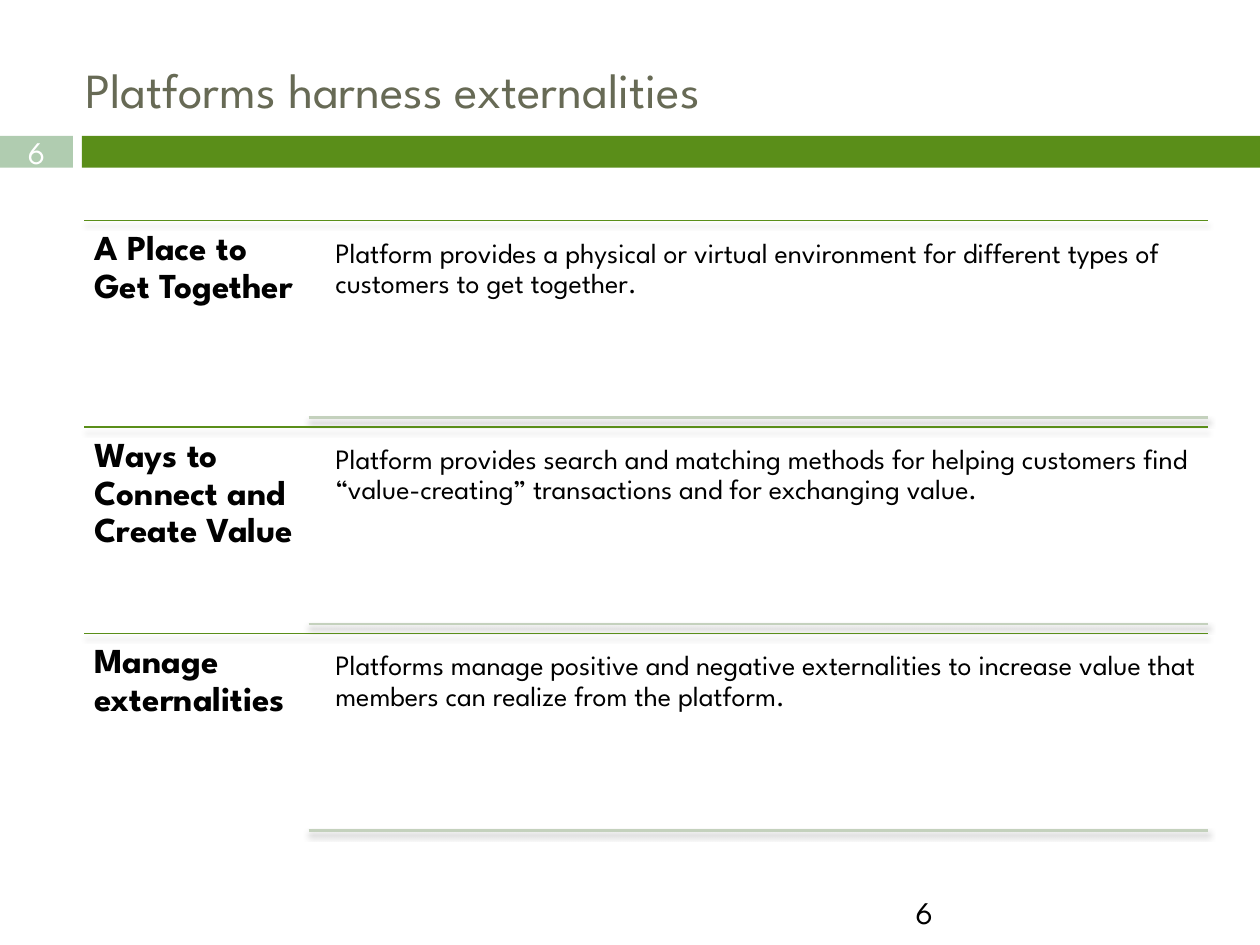
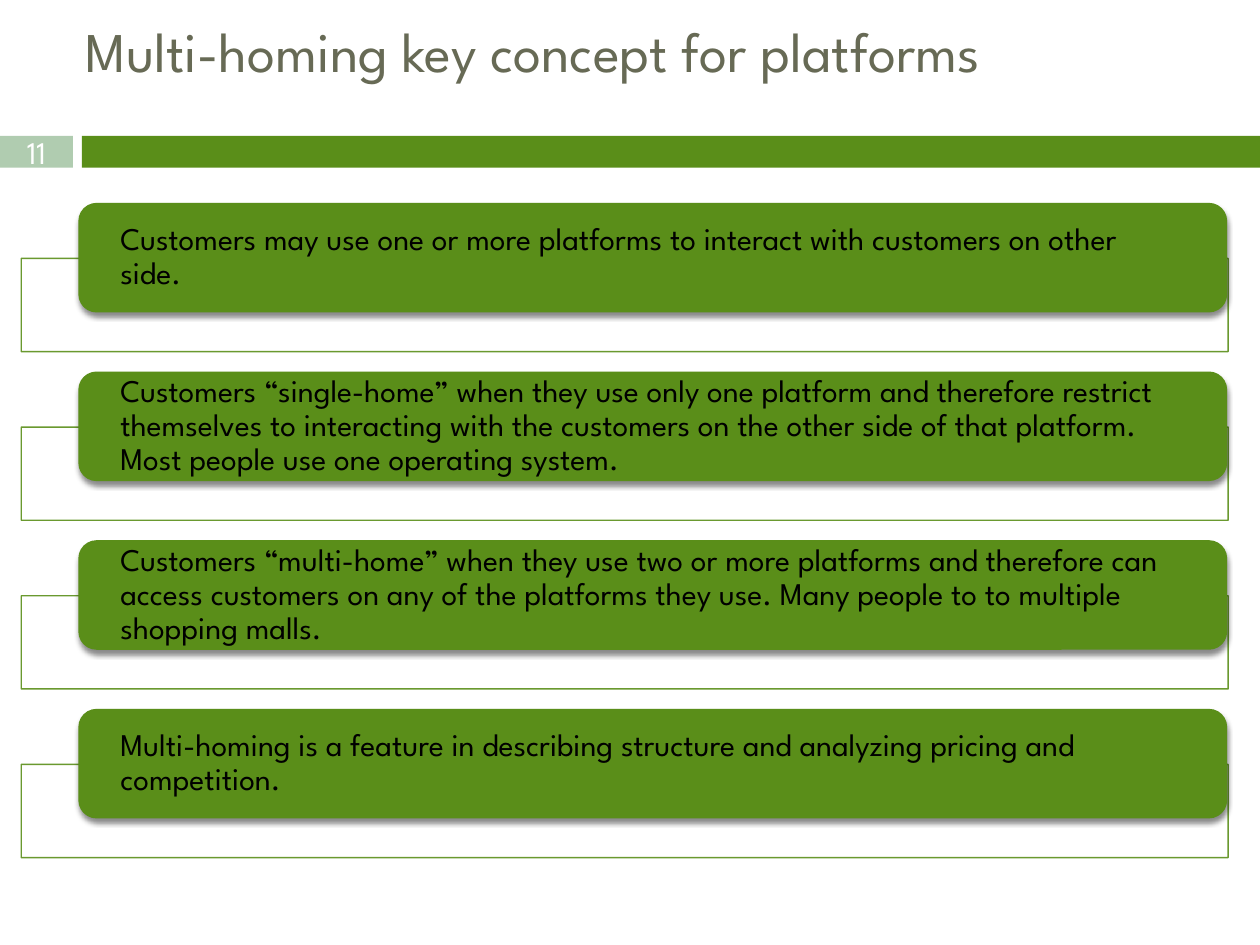
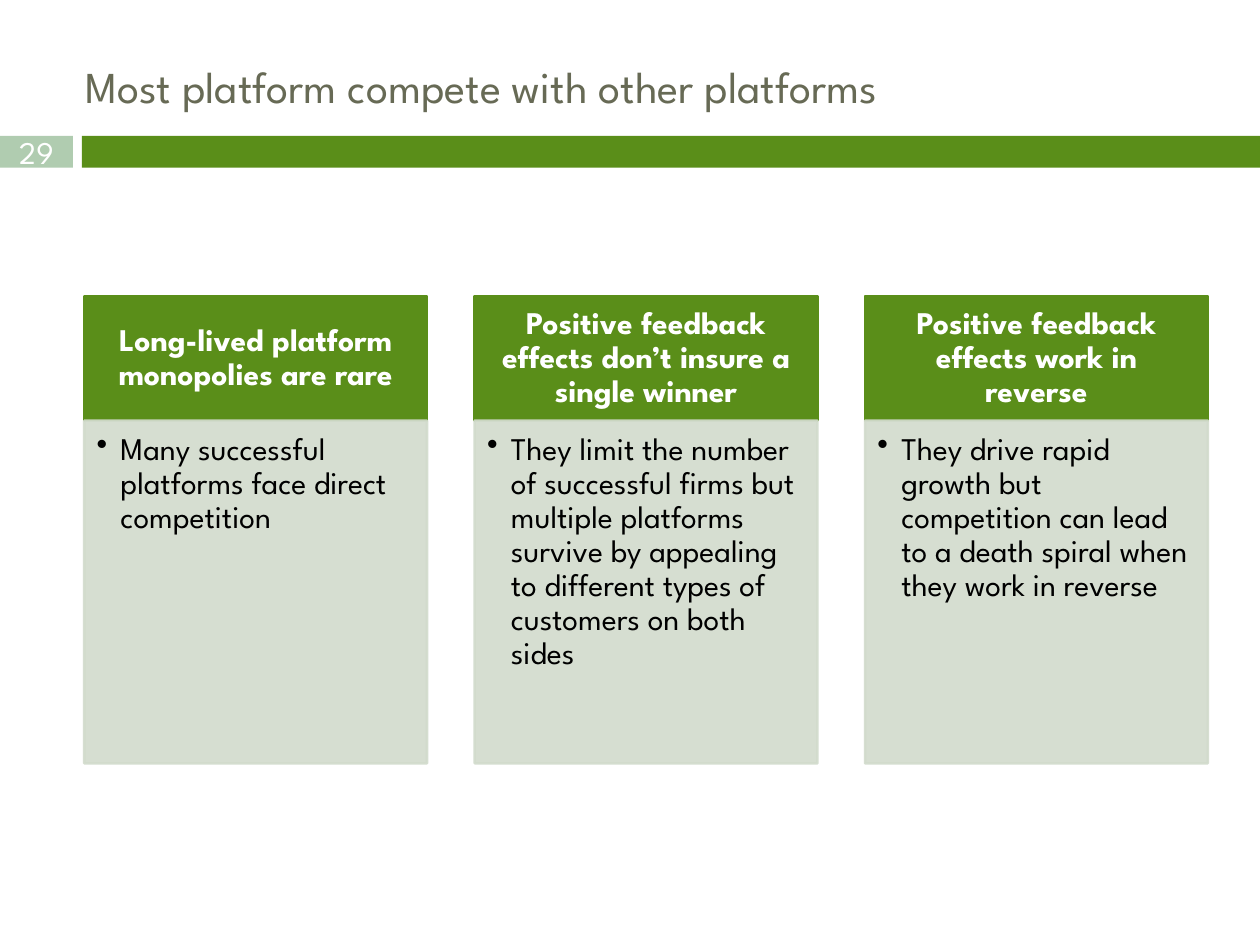
from lxml.etree import SubElement
from pptx import Presentation
from pptx.dml.color import RGBColor
from pptx.enum.shapes import MSO_CONNECTOR, MSO_SHAPE
from pptx.enum.text import MSO_ANCHOR, PP_ALIGN
from pptx.oxml.ns import qn
from pptx.util import Cm, Pt

# Shared look
FONT = "League Spartan"
GREEN, SAGE, PALE, RULE = "5A8E19", "B0CCB0", "D2DBCC", "C4D1BD"
TITLE, BLACK, WHITE = "676A55", "000000", "FFFFFF"
LEFT, RIGHT = 1.7, 24.36

# Content
ROWS = [
    ("A Place to Get Together",
     "Platform provides a physical or virtual environment for different types of "
     "customers to get together."),
    ("Ways to Connect and Create Value",
     "Platform provides search and matching methods for helping customers find "
     "“value-creating” transactions and for exchanging value."),
    ("Manage externalities",
     "Platforms manage positive and negative externalities to increase value that "
     "members can realize from the platform."),
]
CARDS = [
    "Customers may use one or more platforms to interact with customers on other side.",
    "Customers “single-home” when they use only one platform and therefore restrict "
    "themselves to interacting with the customers on the other side of that platform. "
    "Most people use one operating system.",
    "Customers “multi-home” when they use two or more platforms and therefore can "
    "access customers on any of the platforms they use. Many people to to multiple "
    "shopping malls.",
    "Multi-homing is a feature in describing structure and analyzing pricing and "
    "competition.",
]
COLUMNS = [
    ("Long-lived platform monopolies are rare",
     "Many successful platforms face direct competition"),
    ("Positive feedback effects don’t insure a single winner",
     "They limit the number of successful firms but multiple platforms survive by "
     "appealing to different types of customers on both sides"),
    ("Positive feedback effects work in reverse",
     "They drive rapid growth but competition can lead to a death spiral when they "
     "work in reverse"),
]


def color(value):
    return RGBColor.from_string(value)


def place(shape, left, top, width, height):
    shape.left, shape.top = Cm(left), Cm(top)
    shape.width, shape.height = Cm(width), Cm(height)


def write(shape, text, size=18, ink=BLACK, bold=False, align=PP_ALIGN.LEFT,
          anchor=MSO_ANCHOR.TOP, insets=(0.25, 0.13, 0.25, 0.13), spacing=0.9,
          bullet=False):
    frame = shape.text_frame
    frame.word_wrap = True
    frame.vertical_anchor = anchor
    (frame.margin_left, frame.margin_top,
     frame.margin_right, frame.margin_bottom) = map(Cm, insets)
    paragraph = frame.paragraphs[0]
    if bullet:
        properties = paragraph._p.get_or_add_pPr()
        properties.set("marL", str(Cm(0.48)))
        properties.set("indent", str(-Cm(0.48)))
        SubElement(properties, qn("a:buChar"), char="•")
    paragraph.alignment = align
    paragraph.line_spacing = spacing
    run = paragraph.add_run()
    run.text = text
    run.font.name, run.font.size, run.font.bold = FONT, Pt(size), bold
    run.font.color.rgb = color(ink)


def add_shadow(effects):
    shadow = SubElement(effects, qn("a:outerShdw"), blurRad=str(Pt(3)),
                        dist=str(Pt(2.4)), dir="5400000", rotWithShape="0")
    black = SubElement(shadow, qn("a:srgbClr"), val=BLACK)
    SubElement(black, qn("a:alpha"), val="45000")


def make_translucent(shape):
    for tone in shape._element.spPr.iter(qn("a:srgbClr")):
        SubElement(tone, qn("a:alpha"), val="90000")


def add_box(slide, left, top, width, height, fill, line=None, line_width=1.5,
            kind=MSO_SHAPE.RECTANGLE, shadow=False):
    shape = slide.shapes.add_shape(kind, Cm(left), Cm(top), Cm(width), Cm(height))
    shape.shadow.inherit = False
    shape.fill.solid()
    shape.fill.fore_color.rgb = color(fill)
    if line:
        shape.line.color.rgb = color(line)
        shape.line.width = Pt(line_width)
    else:
        shape.line.fill.background()
    if shadow:
        add_shadow(shape._element.spPr.find(qn("a:effectLst")))
    return shape


def add_text(slide, left, top, width, height, text, **style):
    box = slide.shapes.add_textbox(Cm(left), Cm(top), Cm(width), Cm(height))
    write(box, text, **style)


def add_rule(slide, left, top, ink, width):
    rule = slide.shapes.add_connector(MSO_CONNECTOR.STRAIGHT, Cm(left), Cm(top),
                                      Cm(RIGHT), Cm(top))
    rule.line.color.rgb = color(ink)
    rule.line.width = Pt(width)
    add_shadow(SubElement(rule._element.spPr, qn("a:effectLst")))


def add_slide(presentation, title, number, size, area=(1.47, 1.07, 22.66, 1.7)):
    slide = presentation.slides.add_slide(presentation.slide_layouts[5])
    # Green band and number tab
    add_box(slide, 1.65, 2.74, 23.75, 0.64, GREEN)
    tab = add_box(slide, 0, 2.74, 1.47, 0.64, SAGE)
    write(tab, number, ink=WHITE, align=PP_ALIGN.CENTER, anchor=MSO_ANCHOR.MIDDLE,
          insets=(0, 0, 0, 0), spacing=1.0)
    place(slide.shapes.title, *area)
    write(slide.shapes.title, title, size=size, ink=TITLE, spacing=1.0)
    return slide


def add_row(slide, top, heading, text):
    add_rule(slide, LEFT, top, GREEN, 0.79)
    add_text(slide, LEFT, top, 4.52, 4.17, heading, size=20, bold=True,
             insets=(0.2, 0.2, 0.2, 0.2))
    add_text(slide, 6.58, top + 0.19, 17.78, 3.78, text, size=16,
             insets=(0.18, 0.18, 0.18, 0.18))
    add_rule(slide, 6.22, top + 3.97, RULE, 1.5)


def add_card(slide, top, text):
    frame = add_box(slide, 0.43, top + 1.12, 24.33, 1.88, WHITE, GREEN, 0.79)
    make_translucent(frame)
    card = add_box(slide, 1.58, top, 23.16, 2.21, GREEN,
                   kind=MSO_SHAPE.ROUNDED_RECTANGLE, shadow=True)
    write(card, text, anchor=MSO_ANCHOR.MIDDLE, insets=(0.74, 0, 0.74, 0))


def add_column(slide, left, heading, text):
    header = add_box(slide, left, 5.97, 6.91, 2.51, GREEN, GREEN)
    write(header, heading, ink=WHITE, bold=True, align=PP_ALIGN.CENTER,
          anchor=MSO_ANCHOR.MIDDLE, insets=(0.36, 0.2, 0.36, 0.2))
    body = add_box(slide, left, 8.48, 6.91, 6.91, PALE, PALE)
    make_translucent(body)
    write(body, text, insets=(0.25, 0.25, 0.36, 0.41), bullet=True)


def main():
    presentation = Presentation()
    presentation.slide_width, presentation.slide_height = Cm(25.4), Cm(19.05)

    # Externalities: ruled rows
    slide = add_slide(presentation, "Platforms harness externalities", "6", 28)
    for index, row in enumerate(ROWS):
        add_row(slide, 4.45 + index * 4.16, *row)
    add_text(slide, 18.21, 17.88, 5.92, 1.02, "6", spacing=1.0)

    # Multi-homing: stacked cards
    slide = add_slide(presentation, "Multi-homing key concept for platforms", "11", 32,
                      area=(1.47, 0.2, 23.93, 2.57))
    for index, text in enumerate(CARDS):
        add_card(slide, 4.09 + index * 3.4, text)

    # Competition: three columns
    slide = add_slide(presentation, "Most platform compete with other platforms",
                      "29", 25.2)
    for index, column in enumerate(COLUMNS):
        add_column(slide, LEFT + index * 7.87, *column)

    presentation.save("out.pptx")


if __name__ == "__main__":
    main()
